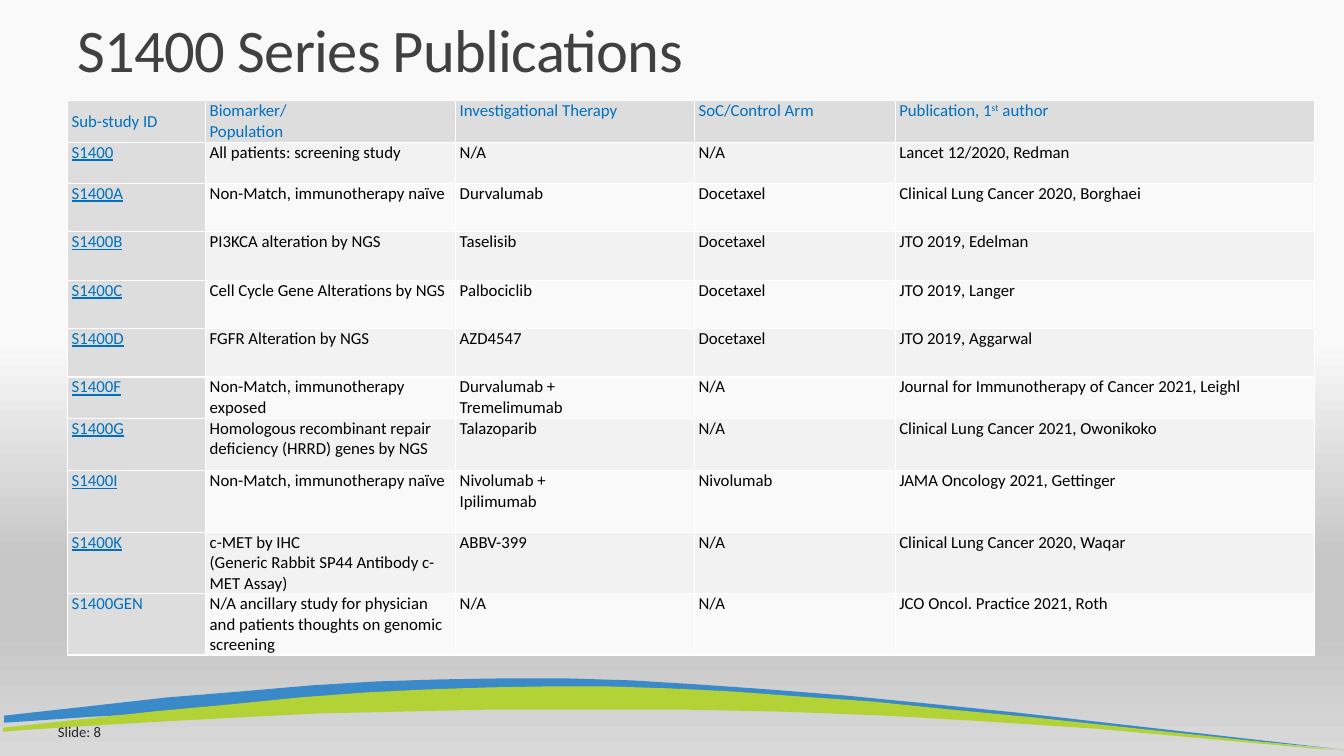
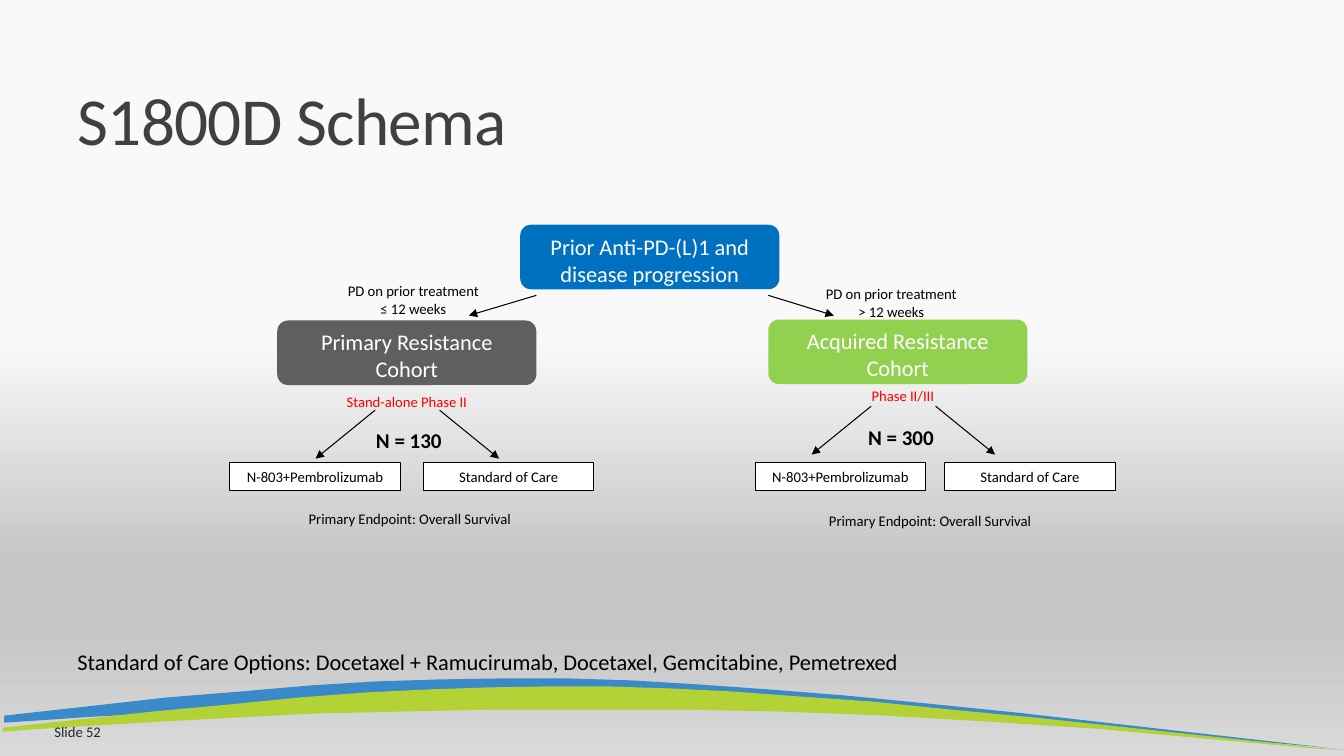
from copy import deepcopy

from lxml.etree import SubElement
from pptx import Presentation
from pptx.dml.color import RGBColor
from pptx.enum.shapes import MSO_CONNECTOR, MSO_SHAPE
from pptx.enum.text import MSO_ANCHOR as ANCHOR, PP_ALIGN as ALIGN
from pptx.oxml import parse_xml
from pptx.oxml.ns import nsdecls, qn
from pptx.util import Inches, Pt


class Theme:
    font = "Calibri"
    title, ink, number = "404040", "000000", "262626"
    blue, gray, green, red, white = "0070C0", "5F5F5F", "92D050", "FF0000", "FFFFFF"
    wave_blue, wave_green = "3A89C9", "B2D235"
    head, bands = "DDDDDD", ("F2F2F2", "F9F9F9")
    backdrop = [(0.45, "F9F9F9"), (0.74, "C6C6C6"), (0.83, "C6C6C6"), (1, "D9D9D9")]
    small, cell, count, body = 10.5, 12, 15, 16


# The slide is a grid of 1333 columns and 750 rows, each a hundredth of an inch
G = Inches(0.01)
COLS, ROWS = 1333, 750
rgb = RGBColor.from_string


def write(tf, text, size=Theme.small, color=Theme.ink, bold=False, underline=False,
          align=ALIGN.LEFT, spacing=None, tracking=None):
    """Fill a text frame: one paragraph per line, ^...^ marks superscript."""
    for i, line in enumerate(text.split("\n")):
        p = tf.add_paragraph() if i else tf.paragraphs[0]
        p.alignment = align
        if spacing:
            p.line_spacing = spacing
        for j, part in enumerate(line.split("^")):
            r = p.add_run()
            r.text = part
            f = r.font
            f.name, f.size, f.bold, f.underline = Theme.font, Pt(size), bold, underline
            f.color.rgb = rgb(color)
            if tracking:
                f._element.set("spc", str(tracking))
            if j % 2:
                f._element.set("baseline", "30000")


def add_box(s, at, text, shape=None, fill=None, line=None, anchor=ANCHOR.TOP, **fmt):
    """Add a text box, or a filled preset shape, holding formatted text."""
    at = [v * G for v in at]
    if shape is None:
        sp = s.shapes.add_textbox(*at)
    else:
        sp = s.shapes.add_shape(shape, *at)
        sp.shadow.inherit = False
        sp.fill.solid()
        sp.fill.fore_color.rgb = rgb(fill)
        if line:
            sp.line.color.rgb = rgb(line)
            sp.line.width = Pt(0.75)
        else:
            sp.line.fill.background()
    tf = sp.text_frame
    tf.word_wrap, tf.vertical_anchor = True, anchor
    write(tf, text, **fmt)


prs = Presentation()
prs.slide_width, prs.slide_height = COLS * G, ROWS * G
master = prs.slide_master

# Shared gradient background
bg = master.background.fill
bg.gradient()
bg.gradient_angle = 270
stops = master.element.find(".//" + qn("a:gsLst"))
stops.extend([deepcopy(stop) for stop in stops])
for stop, (position, color) in zip(bg.gradient_stops, Theme.backdrop):
    stop.position = position
    stop.color.rgb = rgb(color)

# Titles and slide numbers
slides = []
for title, top, height, size, number in [
        ("S1400 Series Publications", 15, 74, 43.2, "Slide: 8"),
        ("S1800D Schema", 4, 159, 48, "Slide 52")]:
    s = prs.slides.add_slide(prs.slide_layouts[5])
    sp = s.shapes.title
    sp.left, sp.top, sp.width, sp.height = 67 * G, top * G, 1153 * G, height * G
    sp.text_frame.vertical_anchor = ANCHOR.BOTTOM
    write(sp.text_frame, title, size=size, color=Theme.title, spacing=0.85, tracking=-50)
    add_box(s, (7, 706, 103, 40), number, color=Theme.number, align=ALIGN.RIGHT,
            anchor=ANCHOR.MIDDLE)
    slides.append(s)
publications, schema = slides

# Waves along the foot, drawn once and kept on the master
waves = [
    (Theme.wave_blue, [
        (500, 673), (438, 674), (374, 676), (308, 680), (239, 686), (165, 692), (85, 701),
        (4, 710), (4, 717), (20, 716), (93, 711), (171, 707), (256, 703), (345, 701),
        (439, 699), (537, 698), (639, 699), (744, 701), (852, 705), (962, 711), (1074, 720),
        (1306, 741), (1326, 743), (1335, 744), (1009, 707), (920, 698), (838, 690),
        (763, 684), (692, 679), (626, 675), (562, 673)]),
    (Theme.wave_green, [
        (544, 681), (485, 682), (425, 684), (363, 687), (297, 692), (227, 699), (151, 706),
        (68, 715), (3, 722), (3, 726), (27, 724), (90, 720), (158, 716), (233, 712),
        (312, 708), (397, 706), (486, 704), (579, 704), (676, 704), (776, 706), (878, 710),
        (982, 716), (1088, 723), (1308, 743), (1327, 744), (1336, 745), (1027, 712),
        (943, 704), (865, 696), (793, 691), (726, 686), (664, 683), (603, 681)]),
]
for n, (color, points) in enumerate(waves):
    builder = publications.shapes.build_freeform(*points[0], scale=G)
    builder.add_line_segments(points[1:], close=True)
    sp = builder.convert_to_shape()
    sp.shadow.inherit = False
    sp.fill.solid()
    sp.fill.fore_color.rgb = rgb(color)
    sp.line.fill.background()
    sp.element.find(".//" + qn("p:cNvPr")).set("id", str(100 + n))
    master.shapes.element.insert(2 + n, sp.element)

# Publications table
records = [
    ("Sub-study ID", "Biomarker/\nPopulation", "Investigational Therapy", "SoC/Control Arm",
     "Publication, 1^st^ author"),
    ("S1400", "All patients: screening study", "N/A", "N/A", "Lancet 12/2020, Redman"),
    ("S1400A", "Non-Match, immunotherapy naïve", "Durvalumab", "Docetaxel",
     "Clinical Lung Cancer 2020, Borghaei"),
    ("S1400B", "PI3KCA alteration by NGS", "Taselisib", "Docetaxel", "JTO 2019, Edelman"),
    ("S1400C", "Cell Cycle Gene Alterations by NGS", "Palbociclib", "Docetaxel",
     "JTO 2019, Langer"),
    ("S1400D", "FGFR Alteration by NGS", "AZD4547", "Docetaxel", "JTO 2019, Aggarwal"),
    ("S1400F", "Non-Match, immunotherapy exposed", "Durvalumab +\nTremelimumab", "N/A",
     "Journal for Immunotherapy of Cancer 2021, Leighl"),
    ("S1400G", "Homologous recombinant repair deficiency (HRRD) genes by NGS",
     "Talazoparib", "N/A", "Clinical Lung Cancer 2021, Owonikoko"),
    ("S1400I", "Non-Match, immunotherapy naïve", "Nivolumab +\nIpilimumab", "Nivolumab",
     "JAMA Oncology 2021, Gettinger"),
    ("S1400K", "c-MET by IHC\n(Generic Rabbit SP44 Antibody c-MET Assay)", "ABBV-399", "N/A",
     "Clinical Lung Cancer 2020, Waqar"),
    ("S1400GEN", "N/A ancillary study for physician and patients thoughts on genomic screening",
     "N/A", "N/A", "JCO Oncol. Practice 2021, Roth"),
]
widths = [137, 248, 237, 199, 416]
heights = [41, 41, 48, 48, 48, 48, 41, 52, 61, 61, 61]
frame = publications.shapes.add_table(len(records), len(widths), 67 * G, 100 * G,
                                      sum(widths) * G, sum(heights) * G)
table = frame.table
table.first_row = table.horz_banding = False
for column, width in zip(table.columns, widths):
    column.width = width * G
for row, height in zip(table.rows, heights):
    row.height = height * G
for i, record in enumerate(records):
    for j, text in enumerate(record):
        cell = table.cell(i, j)
        heading = i == 0 or j == 0
        cell.margin_left = cell.margin_right = 4 * G
        cell.margin_top = cell.margin_bottom = 0
        cell.vertical_anchor = ANCHOR.MIDDLE if i == j == 0 else ANCHOR.TOP
        cell.fill.solid()
        cell.fill.fore_color.rgb = rgb(Theme.head if heading else Theme.bands[(i + 1) % 2])
        write(cell.text_frame, text, size=Theme.cell,
              color=Theme.blue if heading else Theme.ink,
              underline=j == 0 and 0 < i < len(records) - 1)

# White cell borders
for tc_pr in frame.element.iter(qn("a:tcPr")):
    for k, side in enumerate(("lnL", "lnR", "lnT", "lnB")):
        tc_pr.insert(k, parse_xml(
            f'<a:{side} {nsdecls("a")} w="12700"><a:solidFill>'
            f'<a:srgbClr val="{Theme.white}"/></a:solidFill></a:{side}>'))

# Schema: starting population and treatment options
add_box(schema, (516, 223, 257, 64), "Prior Anti-PD-(L)1 and\ndisease progression",
        MSO_SHAPE.ROUNDED_RECTANGLE, Theme.blue, size=Theme.body, color=Theme.white,
        align=ALIGN.CENTER)
add_box(schema, (67, 638, 987, 37), "Standard of Care Options: Docetaxel + Ramucirumab, "
        "Docetaxel, Gemcitabine, Pemetrexed", size=Theme.body)

# Schema: each cohort has its condition, name, phase, size, two arms and endpoint
cohorts = [
    dict(name="Primary Resistance\nCohort", fill=Theme.gray, at=(275, 318),
         limit="≤ 12 weeks", limit_at=(308, 275), phase="Stand-alone Phase II",
         phase_at=(319, 385), count="N = 130", count_at=(321, 419), arms=(228, 420),
         endpoint_at=(233, 501), entry=(532, 293, 465, 313), fork=(404, 407)),
    dict(name="Acquired Resistance\nCohort", fill=Theme.green, at=(762, 317),
         limit="> 12 weeks", limit_at=(782, 278), phase="Phase II/III",
         phase_at=(811, 379), count="N = 300", count_at=(809, 416), arms=(749, 937),
         endpoint_at=(749, 503), entry=(762, 293, 827, 313), fork=(896, 403)),
]
arrows = []
for c in cohorts:
    add_box(schema, (*c["at"], 257, 64), c["name"], MSO_SHAPE.ROUNDED_RECTANGLE, c["fill"],
            size=Theme.body, color=Theme.white, align=ALIGN.CENTER)
    add_box(schema, (*c["limit_at"], 204, 45), "PD on prior treatment\n" + c["limit"],
            align=ALIGN.CENTER)
    add_box(schema, (*c["phase_at"], 169, 28), c["phase"], color=Theme.red,
            align=ALIGN.CENTER)
    add_box(schema, (*c["count_at"], 169, 35), c["count"], size=Theme.count, bold=True,
            align=ALIGN.CENTER)
    for left, arm in zip(c["arms"], ("N-803+Pembrolizumab", "Standard of Care")):
        add_box(schema, (left, 459, 169, 28), arm, MSO_SHAPE.RECTANGLE, Theme.white,
                Theme.ink, align=ALIGN.CENTER)
    add_box(schema, (*c["endpoint_at"], 347, 28), "Primary Endpoint: Overall Survival",
            align=ALIGN.CENTER)
    x, y = c["fork"]
    arrows += [c["entry"]] + [(x + d * 32, y, x + d * 91, y + 48) for d in (-1, 1)]

# Schema: arrows
for ends in arrows:
    line = schema.shapes.add_connector(MSO_CONNECTOR.STRAIGHT, *[v * G for v in ends])
    line.line.color.rgb = rgb(Theme.ink)
    line.line.width = Pt(0.75)
    SubElement(line.line._get_or_add_ln(), qn("a:tailEnd"), type="triangle")
    SubElement(line.element.spPr, qn("a:effectLst"))

prs.save("out.pptx")
